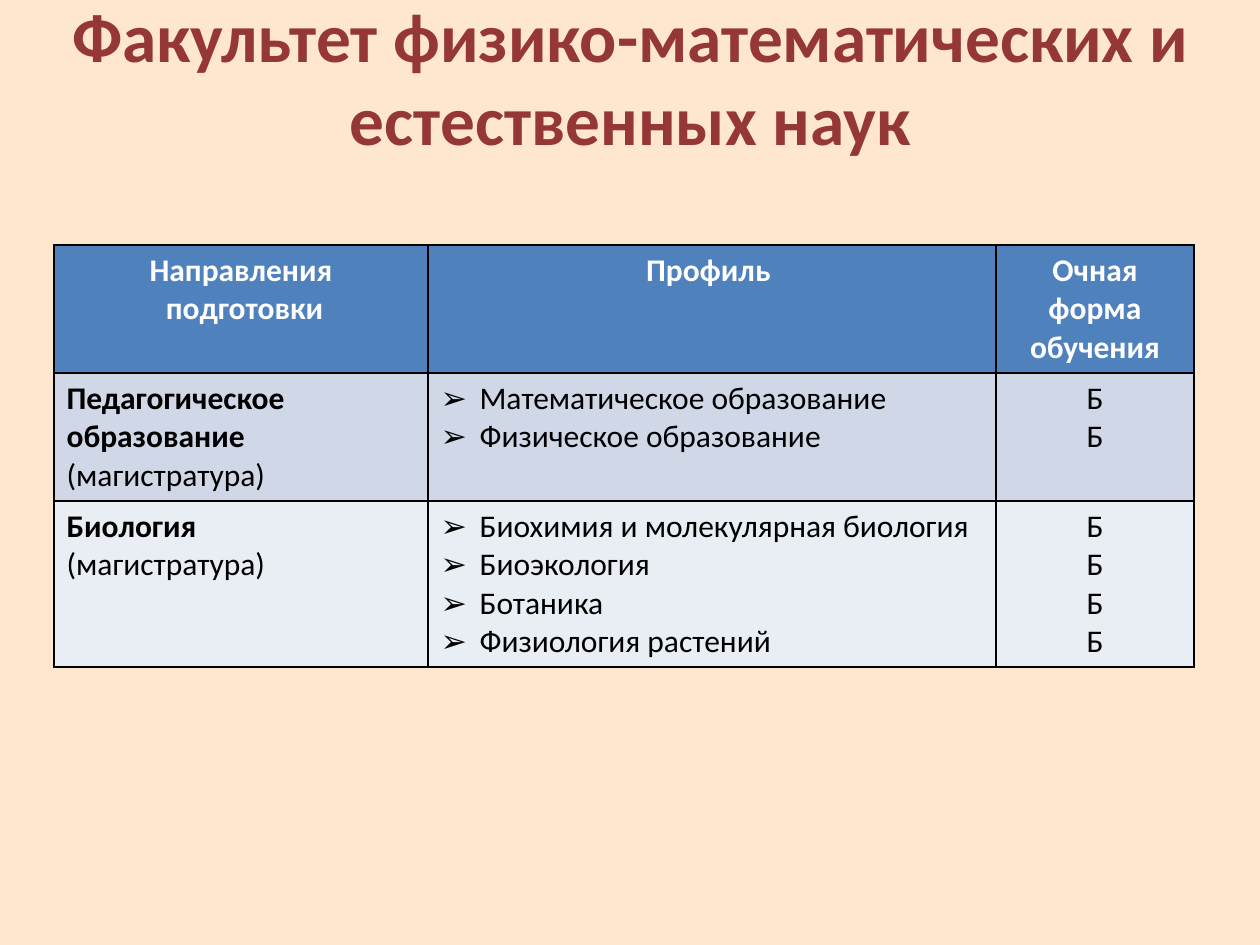
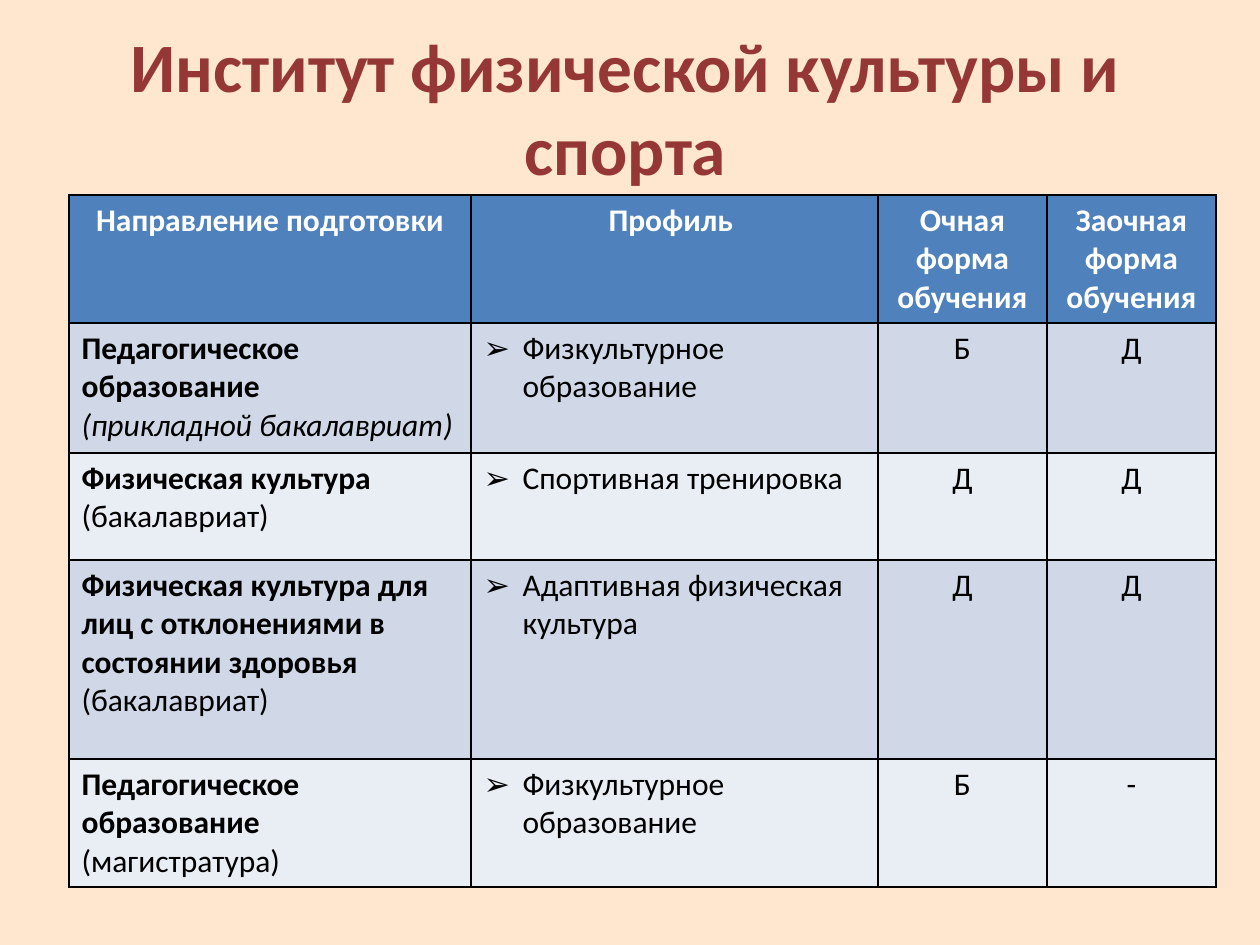
from dataclasses import dataclass

from lxml import etree
from pptx import Presentation
from pptx.dml.color import RGBColor
from pptx.enum.text import MSO_ANCHOR, PP_ALIGN
from pptx.oxml.ns import qn
from pptx.util import Emu, Pt

LEFT = PP_ALIGN.LEFT
CENTER = PP_ALIGN.CENTER
MIDDLE = MSO_ANCHOR.MIDDLE

EMU_PER_INCH = 914400
PX_PER_INCH = 126
SLIDE_WIDTH, SLIDE_HEIGHT = 1260, 945
BLANK_LAYOUT = 6
BULLET = "➢"
BULLET_INDENT = 39


@dataclass(frozen=True)
class Theme:
    font: str = "Calibri"
    title_size: float = 39.6
    table_size: float = 18
    border_width: float = 1
    background: str = "FFE7CF"
    title: str = "953735"
    header_fill: str = "4F81BD"
    header_text: str = "FFFFFF"
    body_text: str = "000000"
    border: str = "000000"
    bands: tuple[str, str] = ("D0D8E8", "E9EDF4")


THEME = Theme()


@dataclass(frozen=True)
class Box:
    left: int
    top: int
    width: int
    height: int


@dataclass(frozen=True)
class Direction:
    """One table row; forms holds one text per study form, a line per profile."""
    name: str
    degree: str
    profiles: tuple[str, ...]
    forms: tuple[str, ...]
    degree_below: bool = False
    degree_italic: bool = False


@dataclass(frozen=True)
class FacultySlide:
    title: str
    title_box: Box
    table_left: int
    table_top: int
    column_widths: tuple[int, ...]
    row_heights: tuple[int, ...]
    headers: tuple[str, ...]
    directions: tuple[Direction, ...]


FACULTIES = (
    FacultySlide(
        title="Факультет физико-математических и естественных наук",
        title_box=Box(35, 38, 1191, 77),
        table_left=54,
        table_top=245,
        column_widths=(374, 568, 198),
        row_heights=(128, 128, 166),
        headers=("Направления\n подготовки", "Профиль ", "Очная форма обучения"),
        directions=(
            Direction("Педагогическое образование ", "(магистратура)",
                      ("Математическое образование", "Физическое образование"),
                      ("Б\nБ",)),
            Direction("Биология", "(магистратура)",
                      ("Биохимия и молекулярная биология", "Биоэкология",
                       "Ботаника", "Физиология растений"),
                      ("Б\nБ\nБ\nБ",), degree_below=True),
        ),
    ),
    FacultySlide(
        title="Институт физической культуры и спорта",
        title_box=Box(25, 37, 1201, 139),
        table_left=69,
        table_top=195,
        column_widths=(402, 407, 169, 169),
        row_heights=(128, 130, 107, 199, 128),
        headers=("Направление подготовки", "Профиль ",
                 "Очная форма обучения", "Заочная форма обучения"),
        directions=(
            Direction("Педагогическое образование", "(прикладной бакалавриат)",
                      ("Физкультурное образование",), ("Б", "Д"),
                      degree_below=True, degree_italic=True),
            Direction("Физическая культура", " (бакалавриат)",
                      ("Спортивная тренировка",), ("Д", "Д")),
            Direction("Физическая культура для лиц с отклонениями в состоянии здоровья ",
                      "(бакалавриат)",
                      ("Адаптивная физическая культура",), ("Д", "Д")),
            Direction("Педагогическое образование ", "(магистратура)",
                      ("Физкультурное образование",), ("Б", "-")),
        ),
    ),
)


def px(length: int) -> Emu:
    return Emu(round(length * EMU_PER_INCH / PX_PER_INCH))


def add_bullet(paragraph) -> None:
    properties = paragraph._p.get_or_add_pPr()
    properties.set("marL", str(px(BULLET_INDENT)))
    properties.set("indent", str(-px(BULLET_INDENT)))
    etree.SubElement(properties, qn("a:buFont"), typeface="Arial")
    etree.SubElement(properties, qn("a:buChar"), char=BULLET)


def write_text(text_frame, text: str, *, size: float = THEME.table_size,
               color: str = THEME.body_text, bold: bool = False, italic: bool = False,
               alignment=LEFT, bulleted: bool = False, continued: bool = False) -> None:
    """Write one paragraph per line; continued text joins the last paragraph."""
    for line in text.split("\n"):
        paragraph = text_frame.paragraphs[-1]
        if paragraph.runs and not continued:
            paragraph = text_frame.add_paragraph()
        if bulleted:
            add_bullet(paragraph)
        paragraph.alignment = alignment
        run = paragraph.add_run()
        run.text = line
        run.font.name = THEME.font
        run.font.size = Pt(size)
        run.font.bold = bold
        run.font.italic = italic
        run.font.color.rgb = RGBColor.from_string(color)


def style_cell(cell, fill: str) -> None:
    properties = cell._tc.get_or_add_tcPr()
    for side in ("lnL", "lnR", "lnT", "lnB"):
        line = etree.SubElement(properties, qn(f"a:{side}"), w=str(Pt(THEME.border_width)))
        solid_fill = etree.SubElement(line, qn("a:solidFill"))
        etree.SubElement(solid_fill, qn("a:srgbClr"), val=THEME.border)
    cell.fill.solid()
    cell.fill.fore_color.rgb = RGBColor.from_string(fill)


def add_title(slide, text: str, box: Box) -> None:
    shape = slide.shapes.add_textbox(px(box.left), px(box.top), px(box.width), px(box.height))
    text_frame = shape.text_frame
    text_frame.word_wrap = True
    text_frame.vertical_anchor = MIDDLE
    write_text(text_frame, text, size=THEME.title_size, color=THEME.title,
               bold=True, alignment=CENTER)


def fill_direction_row(cells, direction: Direction) -> None:
    name_cell, profile_cell, *form_cells = cells
    write_text(name_cell.text_frame, direction.name, bold=True)
    write_text(name_cell.text_frame, direction.degree, italic=direction.degree_italic,
               continued=not direction.degree_below)
    write_text(profile_cell.text_frame, "\n".join(direction.profiles), bulleted=True)
    for cell, form in zip(form_cells, direction.forms):
        write_text(cell.text_frame, form, alignment=CENTER)


def add_directions_table(slide, faculty: FacultySlide) -> None:
    widths, heights = faculty.column_widths, faculty.row_heights
    table = slide.shapes.add_table(
        len(heights), len(widths), px(faculty.table_left), px(faculty.table_top),
        px(sum(widths)), px(sum(heights))).table
    for column, width in zip(table.columns, widths):
        column.width = px(width)
    for index, (row, height) in enumerate(zip(table.rows, heights)):
        row.height = px(height)
        fill = THEME.bands[(index - 1) % 2] if index else THEME.header_fill
        for cell in row.cells:
            style_cell(cell, fill)
    header_row, *direction_rows = table.rows
    for cell, header in zip(header_row.cells, faculty.headers):
        write_text(cell.text_frame, header, color=THEME.header_text,
                   bold=True, alignment=CENTER)
    for row, direction in zip(direction_rows, faculty.directions):
        fill_direction_row(row.cells, direction)


def add_faculty_slide(presentation, faculty: FacultySlide) -> None:
    slide = presentation.slides.add_slide(presentation.slide_layouts[BLANK_LAYOUT])
    background = slide.background.fill
    background.solid()
    background.fore_color.rgb = RGBColor.from_string(THEME.background)
    add_title(slide, faculty.title, faculty.title_box)
    add_directions_table(slide, faculty)


def main() -> None:
    presentation = Presentation()
    presentation.slide_width = px(SLIDE_WIDTH)
    presentation.slide_height = px(SLIDE_HEIGHT)
    for faculty in FACULTIES:
        add_faculty_slide(presentation, faculty)
    presentation.save("out.pptx")


if __name__ == "__main__":
    main()
